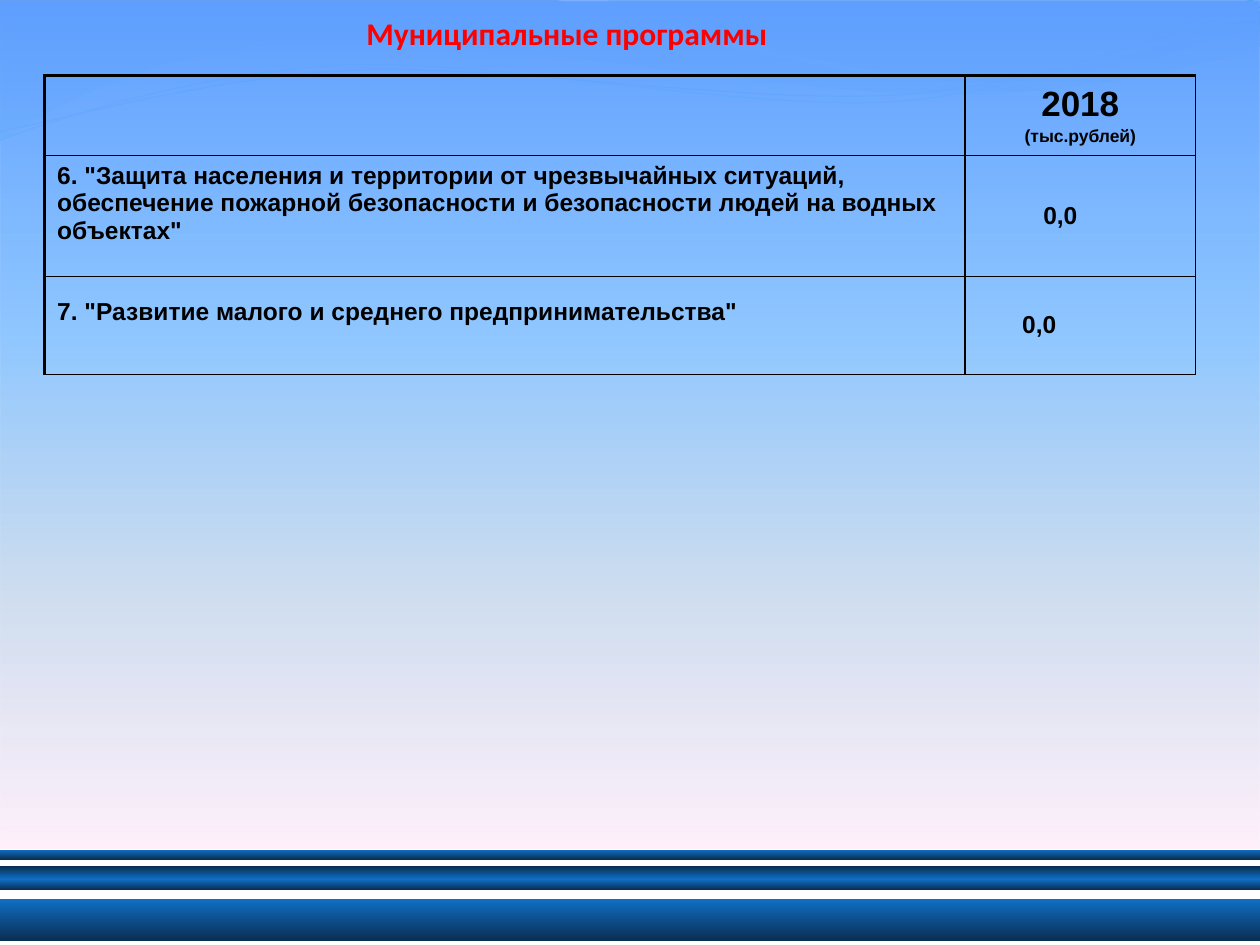
from lxml.etree import SubElement
from pptx import Presentation
from pptx.dml.color import RGBColor
from pptx.enum.shapes import MSO_SHAPE
from pptx.enum.text import MSO_ANCHOR, PP_ALIGN
from pptx.oxml.ns import qn
from pptx.util import Pt

WIDTH, HEIGHT = 720, 540
BLUE, NAVY = "0F6FC6", "0A2E52"
SKY = [(0, "5E9EFF", 100), (40, "85C2FF", 90), (70, "C4D6EB", 82), (100, "FFEBFA", 74)]
LEFT_WAVE = [(0, -0.7), (317, -0.7), (343, 12), (478, 45), (546, 45), (614, 45), (690, 19),
             (720, 6), (721, 26), (708, 32), (626, 55), (537, 54), (448, 54), (275, 20),
             (185, 24), (93, 25), (33, 60), (-0.7, 81)]
RIGHT_WAVE = [(345, -0.7), (366, 8), (491, 45), (554, 47), (616, 50), (692, 23), (720, 15),
              (720, 0)]
UPPER_LINE = [(0, 80), (35, 67), (114, 41), (199, 37), (284, 34), (427, 64), (513, 58),
              (600, 51), (676, 11), (719, -1)]
LOWER_LINE = [(0, 75), (34, 69), (118, 44), (204, 40), (290, 37), (430, 60), (516, 54),
              (602, 48), (678, 15), (720, 4)]


def color(hex_value):
    """Return the colour for a hex string."""
    return RGBColor.from_string(hex_value)


def add_color(parent, hex_value, opacity=100):
    """Append an RGB colour element with an opacity in percent."""
    element = SubElement(parent, qn("a:srgbClr"), val=hex_value)
    if opacity < 100:
        SubElement(element, qn("a:alpha"), val=str(opacity * 1000))


def set_gradient(shape, stops):
    """Fill a shape from top to bottom with (position, colour, opacity) stops."""
    shape.shadow.inherit = False
    shape.line.fill.background()
    shape.fill.gradient()
    gradient = shape._element.spPr.find(qn("a:gradFill"))
    for child in list(gradient):
        gradient.remove(child)
    stop_list = SubElement(gradient, qn("a:gsLst"))
    for position, hex_value, opacity in stops:
        add_color(SubElement(stop_list, qn("a:gs"), pos=str(position * 1000)), hex_value, opacity)
    SubElement(gradient, qn("a:lin"), ang="5400000", scaled="0")


def add_outline(slide, points, segments, closed):
    """Draw a freeform whose segments are L for a line or C for a cubic curve."""
    scaled = [(Pt(x), Pt(y)) for x, y in points]
    builder = slide.shapes.build_freeform(*scaled[0])
    builder.add_line_segments(scaled[1:], close=closed)
    shape = builder.convert_to_shape()
    shape.shadow.inherit = False
    lines = iter(list(shape._element.iter(qn("a:lnTo"))))
    for segment in segments:
        line = next(lines)
        if segment == "C":
            line.tag = qn("a:cubicBezTo")
            for _ in range(2):
                following = next(lines)
                line.append(following[0])
                following.getparent().remove(following)
    return shape


def add_curve_line(slide, points, hex_value, width):
    """Draw a thin open curve."""
    shape = add_outline(slide, points, "CCC", False)
    shape.fill.background()
    shape.line.color.rgb = color(hex_value)
    shape.line.width = Pt(width)


def add_band(slide, top, height, stops):
    """Add a full-width rectangle with a vertical gradient."""
    shape = slide.shapes.add_shape(MSO_SHAPE.RECTANGLE, 0, Pt(top), Pt(WIDTH), Pt(height))
    set_gradient(shape, stops)


def format_paragraph(paragraph, size, alignment, font_name="Arial", hex_value="000000"):
    """Align a paragraph and style its runs in bold."""
    paragraph.alignment = alignment
    for run in paragraph.runs:
        run.font.name = font_name
        run.font.size = Pt(size)
        run.font.bold = True
        run.font.color.rgb = color(hex_value)


def add_title(slide, text):
    """Add the red centred heading."""
    text_box = slide.shapes.add_textbox(0, Pt(9), Pt(648), Pt(20.5))
    text_frame = text_box.text_frame
    text_frame.word_wrap = True
    text_frame.vertical_anchor = MSO_ANCHOR.BOTTOM
    text_frame.margin_left = text_frame.margin_right = text_frame.margin_bottom = 0
    text_frame.text = text
    format_paragraph(text_frame.paragraphs[0], 18, PP_ALIGN.CENTER, "Calibri", "FF0000")


def set_borders(cell, widths):
    """Draw black left, right, top and bottom cell borders."""
    properties = cell._tc.get_or_add_tcPr()
    for side, width in zip("LRTB", widths):
        line = SubElement(properties, qn(f"a:ln{side}"), w=str(Pt(width)))
        add_color(SubElement(line, qn("a:solidFill")), "000000")


def fill_cell(cell, lines, alignment, right, top, bottom):
    """Write (text, size, space before) lines into a transparent cell."""
    cell.fill.background()
    cell.vertical_anchor = MSO_ANCHOR.MIDDLE
    cell.margin_right, cell.margin_top, cell.margin_bottom = Pt(right), Pt(top), Pt(bottom)
    cell.text_frame.text = "\n".join(text for text, _, _ in lines)
    for paragraph, (_, size, space) in zip(cell.text_frame.paragraphs, lines):
        paragraph.space_before = Pt(space)
        format_paragraph(paragraph, size, alignment)


def add_program_table(slide, rows, column_widths, row_heights):
    """Add the table; a cell is (lines, right margin, top margin, bottom margin)."""
    frame = slide.shapes.add_table(len(rows), len(column_widths), Pt(25.5), Pt(43.2),
                                   Pt(sum(column_widths)), Pt(sum(row_heights)))
    table = frame.table
    table.first_row = table.horz_banding = False
    for column, width in zip(table.columns, column_widths):
        column.width = Pt(width)
    for row_index, row in enumerate(rows):
        table.rows[row_index].height = Pt(row_heights[row_index])
        for column_index, content in enumerate(row):
            cell = table.cell(row_index, column_index)
            set_borders(cell, (1 if column_index else 2.25, 1, 1 if row_index else 2.25, 1))
            fill_cell(cell, content[0], PP_ALIGN.CENTER if column_index else PP_ALIGN.LEFT,
                      *content[1:])


def main():
    """Build and save the slide."""
    presentation = Presentation()
    presentation.slide_width, presentation.slide_height = Pt(WIDTH), Pt(HEIGHT)
    slide = presentation.slides.add_slide(presentation.slide_layouts[6])

    set_gradient(add_outline(slide, LEFT_WAVE, "LCCLCCC", True),
                 [(0, "00539E", 45), (100, "00C6CF", 55)])
    set_gradient(add_outline(slide, RIGHT_WAVE, "CCL", True),
                 [(0, "00A1A9", 30), (80, "0063BC", 45)])
    add_curve_line(slide, UPPER_LINE, "0AB8BF", 0.85)
    add_curve_line(slide, LOWER_LINE, BLUE, 0.75)

    add_band(slide, 0.5, 484.5, SKY)
    fade = [(0, BLUE, 100), (100, NAVY, 100)]
    rise = [(0, NAVY, 100), (100, BLUE, 100)]
    for top, height, stops in ((513.7, 24, fade), (485.5, 5.7, fade),
                               (495, 7.5, rise), (502.5, 6, fade)):
        add_band(slide, top, height, stops)

    add_title(slide, "Муниципальные программы")
    defense = ('6. "Защита населения и территории от чрезвычайных ситуаций, обеспечение '
               'пожарной безопасности и безопасности людей на водных объектах"')
    business = '7. "Развитие малого и среднего предпринимательства"'
    add_program_table(slide, [
        [([], 7.2, 3.6, 3.6), ([("2018", 20, 4), ("(тыс.рублей)", 10, 2)], 7.2, 3.6, 3.6)],
        [([(defense, 14, 0)], 7.2, 2, 16.5), ([("0,0", 14, 0)], 30, 3.6, 3.6)],
        [([(business, 14, 0)], 7.2, 3.6, 19), ([("0,0", 14, 0)], 54, 3.6, 3.6)],
    ], (526, 131.6), (45.7, 69, 56.2))
    presentation.save("out.pptx")


if __name__ == "__main__":
    main()
